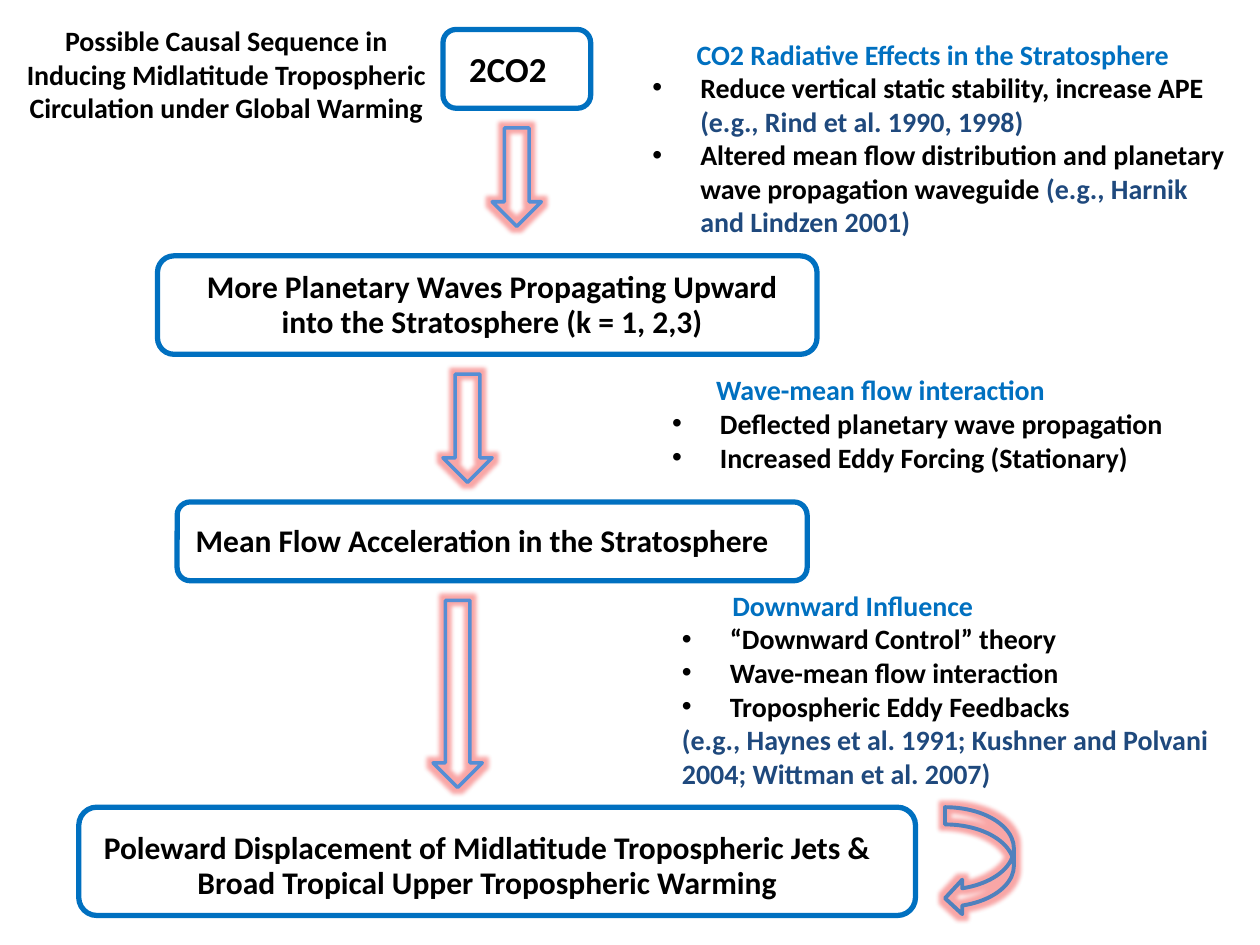
from lxml import etree
from pptx import Presentation, util as u
from pptx.dml.color import RGBColor
from pptx.enum import shapes, text
from pptx.oxml import parse_xml
from pptx.oxml.ns import nsdecls, qn

BLACK, BLUE, NAVY = "000000", "0070C0", "1F497D"
COLUMNS, ROWS = 128, 96
CENTER, LEFT = text.PP_ALIGN.CENTER, text.PP_ALIGN.LEFT


def color(value):
    return RGBColor.from_string(value)


class FlowSlide:
    font = "Calibri"
    list_size = 16
    bullet_indent = 0.38

    def __init__(self, presentation):
        self.cell_width = presentation.slide_width / COLUMNS
        self.cell_height = presentation.slide_height / ROWS
        # The Comparison layout offers a title and several body placeholders
        self.slide = presentation.slides.add_slide(presentation.slide_layouts[4])

    def box(self, column, row, columns, rows):
        return (int(column * self.cell_width), int(row * self.cell_height),
                int(columns * self.cell_width), int(rows * self.cell_height))

    def place(self, shape, area):
        shape.left, shape.top, shape.width, shape.height = self.box(*area)

    def prepare(self, shape):
        frame = shape.text_frame
        frame.word_wrap = True
        frame.auto_size = text.MSO_AUTO_SIZE.NONE
        frame.vertical_anchor = text.MSO_ANCHOR.MIDDLE
        return frame

    def format(self, paragraph, size, alignment, colors=(BLACK,)):
        paragraph.alignment = alignment
        paragraph.space_before = u.Pt(0)
        for run, value in zip(paragraph.runs, colors):
            run.font.name, run.font.size, run.font.bold = self.font, u.Pt(size), True
            run.font.color.rgb = color(value)

    def title(self, wording, area):
        shape = self.slide.shapes.title
        self.place(shape, area)
        frame = self.prepare(shape)
        frame.text = wording
        self.format(frame.paragraphs[0], self.list_size, CENTER)

    def label(self, lines, area, size=18, spacing=20):
        frame = self.prepare(self.slide.shapes.add_textbox(*self.box(*area)))
        frame.text = "\n".join(lines)
        for paragraph in frame.paragraphs:
            self.format(paragraph, size, CENTER)
            paragraph.line_spacing = u.Pt(spacing) if spacing else None

    def indent(self, paragraph, margin, bullet=False):
        properties = paragraph._p.get_or_add_pPr()
        properties.set("marL", str(u.Inches(margin)))
        properties.set("indent", str(-u.Inches(margin) if bullet else 0))
        if bullet:
            etree.SubElement(properties, qn("a:buFont")).set("typeface", "Arial")
            etree.SubElement(properties, qn("a:buChar")).set("char", "•")
        else:
            etree.SubElement(properties, qn("a:buNone"))

    def explanation(self, index, area, heading, heading_indent, bullets, citation=None):
        shape = self.slide.placeholders[index]
        self.place(shape, area)
        frame = self.prepare(shape)
        entries = [([(heading, BLUE)], heading_indent, False)]
        entries += [(runs, self.bullet_indent, True) for runs in bullets]
        if citation:
            entries.append(([(citation, NAVY)], 0, False))
        for number, (runs, margin, bullet) in enumerate(entries):
            paragraph = frame.add_paragraph() if number else frame.paragraphs[0]
            for wording, _ in runs:
                paragraph.add_run().text = wording
            self.format(paragraph, self.list_size, LEFT, [value for _, value in runs])
            self.indent(paragraph, margin, bullet)

    def outline(self, kind, area, line, width):
        shape = self.slide.shapes.add_shape(kind, *self.box(*area))
        shape.shadow.inherit = False
        shape.fill.background()
        shape.line.color.rgb = color(line)
        shape.line.width = u.Pt(width)
        return shape

    def frame(self, area):
        self.outline(shapes.MSO_SHAPE.ROUNDED_RECTANGLE, area, BLUE, 3)

    def glowing_arrow(self, kind, area, line, width):
        shape = self.outline(kind, area, line, width)
        effects = shape._element.spPr.find(qn("a:effectLst"))
        effects.append(parse_xml(
            f'<a:glow {nsdecls("a")} rad="63500"><a:srgbClr val="F02020">'
            '<a:alpha val="40000"/></a:srgbClr></a:glow>'))

    def remove_empty_placeholders(self):
        for shape in list(self.slide.placeholders):
            if not shape.text_frame.text:
                shape._element.getparent().remove(shape._element)


def main():
    presentation = Presentation()
    presentation.slide_width, presentation.slide_height = u.Inches(10), u.Inches(7.5)
    flow = FlowSlide(presentation)

    # Title
    flow.title("Possible Causal Sequence in Inducing Midlatitude Tropospheric "
               "Circulation under Global Warming", (1, 2, 44, 11))

    # Explanations beside the steps
    flow.explanation(1, (65, 2, 61, 24), "CO2 Radiative Effects in the Stratosphere", 0.35, [
        [("Reduce vertical static stability, increase APE ", BLACK),
         ("(e.g., Rind et al. 1990, 1998)", NAVY)],
        [("Altered mean flow distribution and planetary wave propagation waveguide ", BLACK),
         ("(e.g., Harnik and Lindzen 2001)", NAVY)]])
    flow.explanation(2, (67, 37, 54, 12), "Wave-mean flow interaction", 0.35, [
        [("Deflected planetary wave propagation", BLACK)],
        [("Increased Eddy Forcing (Stationary)", BLACK)]])
    flow.explanation(3, (68, 59, 60, 22), "Downward Influence", 0.4, [
        [("“Downward Control” theory", BLACK)],
        [("Wave-mean flow interaction", BLACK)],
        [("Tropospheric Eddy Feedbacks", BLACK)]],
        "(e.g., Haynes et al. 1991; Kushner and Polvani 2004; Wittman et al. 2007)")
    flow.remove_empty_placeholders()

    # Steps of the causal chain
    flow.label(["2CO2 "], (44, 3, 16, 8), size=20, spacing=None)
    flow.label(["More Planetary Waves Propagating Upward into the Stratosphere (k = 1, 2,3)"],
               (17, 25, 66, 12))
    flow.label(["Mean Flow Acceleration in the Stratosphere"], (16, 51, 66, 8))
    flow.label(["Poleward Displacement of Midlatitude Tropospheric Jets &",
                "Broad Tropical Upper Tropospheric Warming"], (9, 83, 81, 10))
    for area in ((45, 3, 15, 8), (16, 26, 67, 10), (18, 51, 64, 8), (8, 82, 85, 11)):
        flow.frame(area)

    # Arrows between the steps, and the feedback loop
    for area in ((50, 13, 5, 10), (45, 38, 5, 11), (44, 61, 5, 19)):
        flow.glowing_arrow(shapes.MSO_SHAPE.DOWN_ARROW, area, "558ED5", 2)
    flow.glowing_arrow(shapes.MSO_SHAPE.CURVED_LEFT_ARROW, (96, 82, 7, 11), "4F81BD", 2.25)

    presentation.save("out.pptx")


if __name__ == "__main__":
    main()
